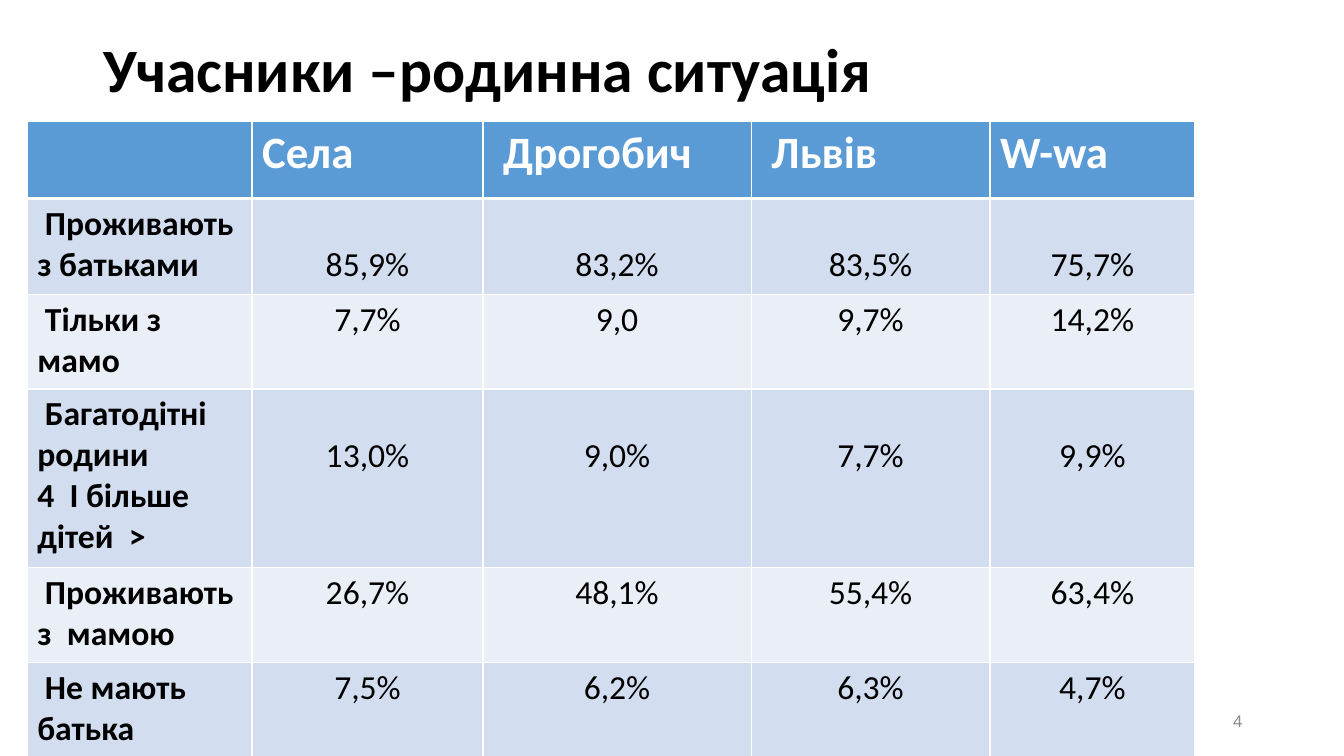
from dataclasses import dataclass

from lxml import etree
from pptx import Presentation, slide as sl, table as tb
from pptx import util as u
from pptx.dml import color
from pptx.enum import text
from pptx.oxml import ns
from pptx.text import text as tx

BLACK, WHITE, GREY = "000000", "FFFFFF", "898989"
HEADER_FILL = "5B9BD5"
BAND_FILLS = ("D2DEEF", "EAEFF7")
LEFT, CENTER, RIGHT = text.PP_ALIGN.LEFT, text.PP_ALIGN.CENTER, text.PP_ALIGN.RIGHT
TOP_MARGIN = 0.05
LOWERED_MARGIN = 0.46


@dataclass(frozen=True)
class Style:
    size: int
    color: str = BLACK
    bold: bool = False
    font: str = "Calibri"
    align: text.PP_ALIGN = LEFT
    spacing: float = 1.0


@dataclass(frozen=True)
class Label:
    content: str
    left: float
    top: float
    width: float
    height: float
    style: Style


@dataclass(frozen=True)
class FamilyRow:
    title: tuple[str, ...]
    values: tuple[str, ...]
    height: float
    lowered: bool = False


HEADER_STYLE = Style(32, WHITE, bold=True)
TITLE_STYLE = Style(24, bold=True)
VALUE_STYLE = Style(24, align=CENTER)

LABELS = (
    Label(" Учасники –родинна ситуація", 0.79, -0.24, 11.63, 1.91,
          Style(44, bold=True, spacing=0.9)),
    Label("4", 9.42, 6.95, 3, 0.4, Style(12, GREY, font="Arial", align=RIGHT)),
)
HEADINGS = ("", "Села", " Дрогобич", " Львів", "W-wa")
COLUMN_WIDTHS = (2.23, 2.29, 2.66, 2.37, 2.03)
HEADER_HEIGHT = 0.77
FAMILY_ROWS = (
    FamilyRow((" Проживають з батьками",),
              ("85,9%", "83,2%", "83,5%", "75,7%"), 0.95, lowered=True),
    FamilyRow((" Тільки з мамо",), ("7,7%", "9,0", "9,7%", "14,2%"), 0.94),
    FamilyRow((" Багатодітні родини", "4  І більше дітей  >"),
              ("13,0%", "9,0%", "7,7%", "9,9%"), 1.77, lowered=True),
    FamilyRow((" Проживають з  мамою",),
              ("26,7%", "48,1%", "55,4%", "63,4%"), 0.94),
    FamilyRow((" Не мають батька",), ("7,5%", "6,2%", "6,3%", "4,7%"), 0.94),
)


def rgb(value: str) -> color.RGBColor:
    return color.RGBColor.from_string(value)


def write(frame: tx.TextFrame, lines: tuple[str, ...], style: Style) -> None:
    for index, line in enumerate(lines):
        paragraph = frame.add_paragraph() if index else frame.paragraphs[0]
        paragraph.alignment = style.align
        paragraph.line_spacing = style.spacing
        if not line:
            continue
        run = paragraph.add_run()
        run.text = line
        run.font.name = style.font
        run.font.size = u.Pt(style.size)
        run.font.bold = style.bold
        run.font.color.rgb = rgb(style.color)


def add_label(slide: sl.Slide, label: Label) -> None:
    shape = slide.shapes.add_textbox(u.Inches(label.left), u.Inches(label.top),
                                     u.Inches(label.width), u.Inches(label.height))
    frame = shape.text_frame
    frame.word_wrap = True
    frame.vertical_anchor = text.MSO_ANCHOR.MIDDLE
    write(frame, (label.content,), label.style)


def fill_cell(table: tb.Table, row: int, column: int, lines: tuple[str, ...],
              style: Style, fill: str, margin_top: float = TOP_MARGIN) -> None:
    cell = table.cell(row, column)
    cell.margin_left = cell.margin_right = u.Inches(0.1)
    cell.margin_top = u.Inches(margin_top)
    cell.margin_bottom = u.Inches(0.05)
    write(cell.text_frame, lines, style)
    properties = cell._tc.get_or_add_tcPr()
    widths = {"L": 1, "R": 1, "T": 3 if row == 1 else 1, "B": 3 if row == 0 else 1}
    for side, width in widths.items():
        line = etree.SubElement(properties, ns.qn(f"a:ln{side}"), w=str(u.Pt(width)))
        solid = etree.SubElement(line, ns.qn("a:solidFill"))
        etree.SubElement(solid, ns.qn("a:srgbClr"), val=WHITE)
    cell.fill.solid()
    cell.fill.fore_color.rgb = rgb(fill)


def add_family_table(slide: sl.Slide) -> None:
    heights = (HEADER_HEIGHT, *(family.height for family in FAMILY_ROWS))
    table = slide.shapes.add_table(
        len(heights), len(COLUMN_WIDTHS), u.Inches(0.27), u.Inches(1.2),
        u.Inches(sum(COLUMN_WIDTHS)), u.Inches(sum(heights))).table
    for column, width in zip(table.columns, COLUMN_WIDTHS):
        column.width = u.Inches(width)
    for row, height in zip(table.rows, heights):
        row.height = u.Inches(height)
    for column, heading in enumerate(HEADINGS):
        fill_cell(table, 0, column, (heading,), HEADER_STYLE, HEADER_FILL)
    for row, family in enumerate(FAMILY_ROWS, start=1):
        fill = BAND_FILLS[(row - 1) % 2]
        margin_top = LOWERED_MARGIN if family.lowered else TOP_MARGIN
        fill_cell(table, row, 0, family.title, TITLE_STYLE, fill)
        for column, value in enumerate(family.values, start=1):
            fill_cell(table, row, column, (value,), VALUE_STYLE, fill, margin_top)


def main() -> None:
    presentation = Presentation()
    presentation.slide_width = u.Inches(13.33)
    presentation.slide_height = u.Inches(7.5)
    slide = presentation.slides.add_slide(presentation.slide_layouts[6])
    title, number = LABELS
    add_label(slide, title)
    add_family_table(slide)
    add_label(slide, number)
    presentation.save("out.pptx")


if __name__ == "__main__":
    main()
